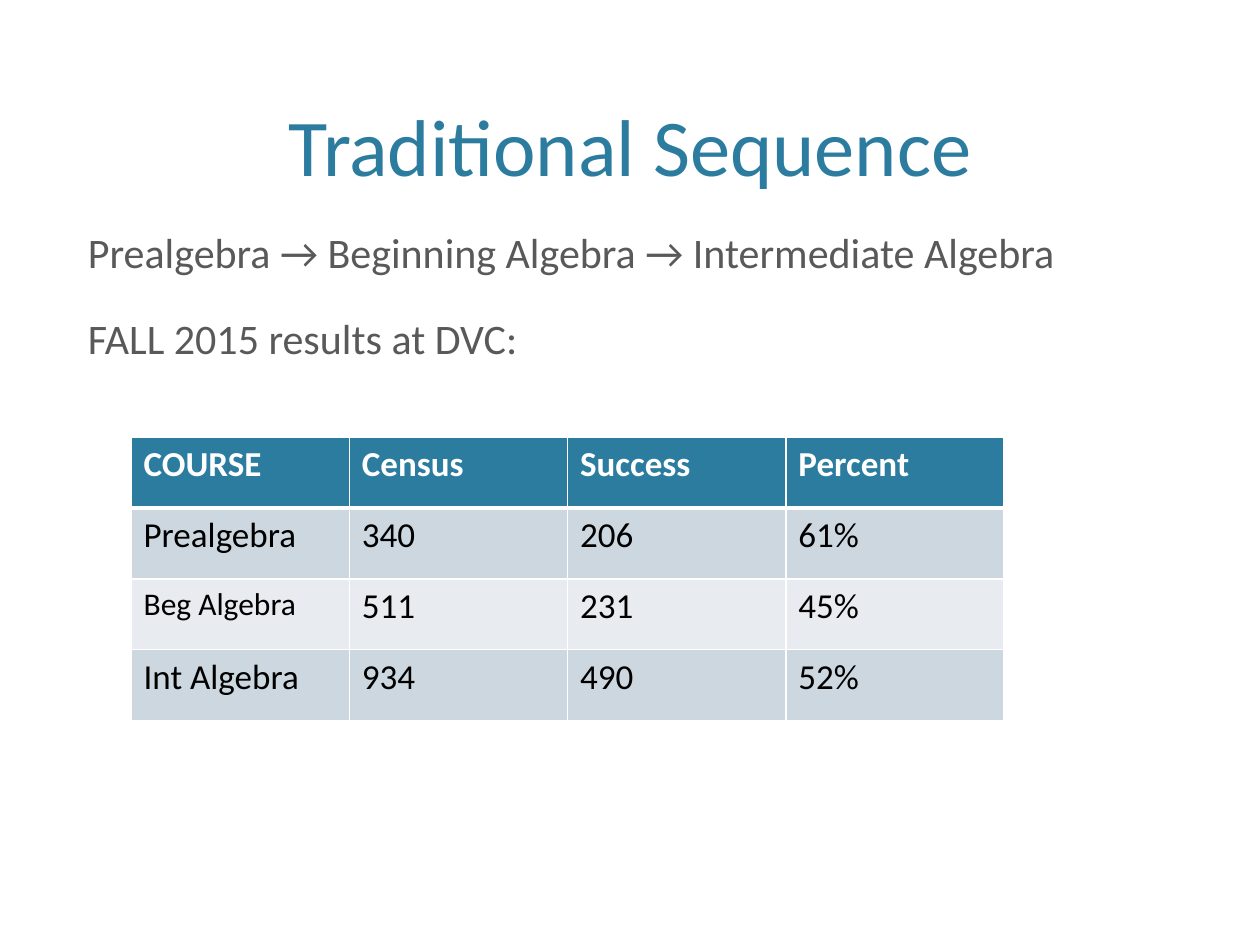
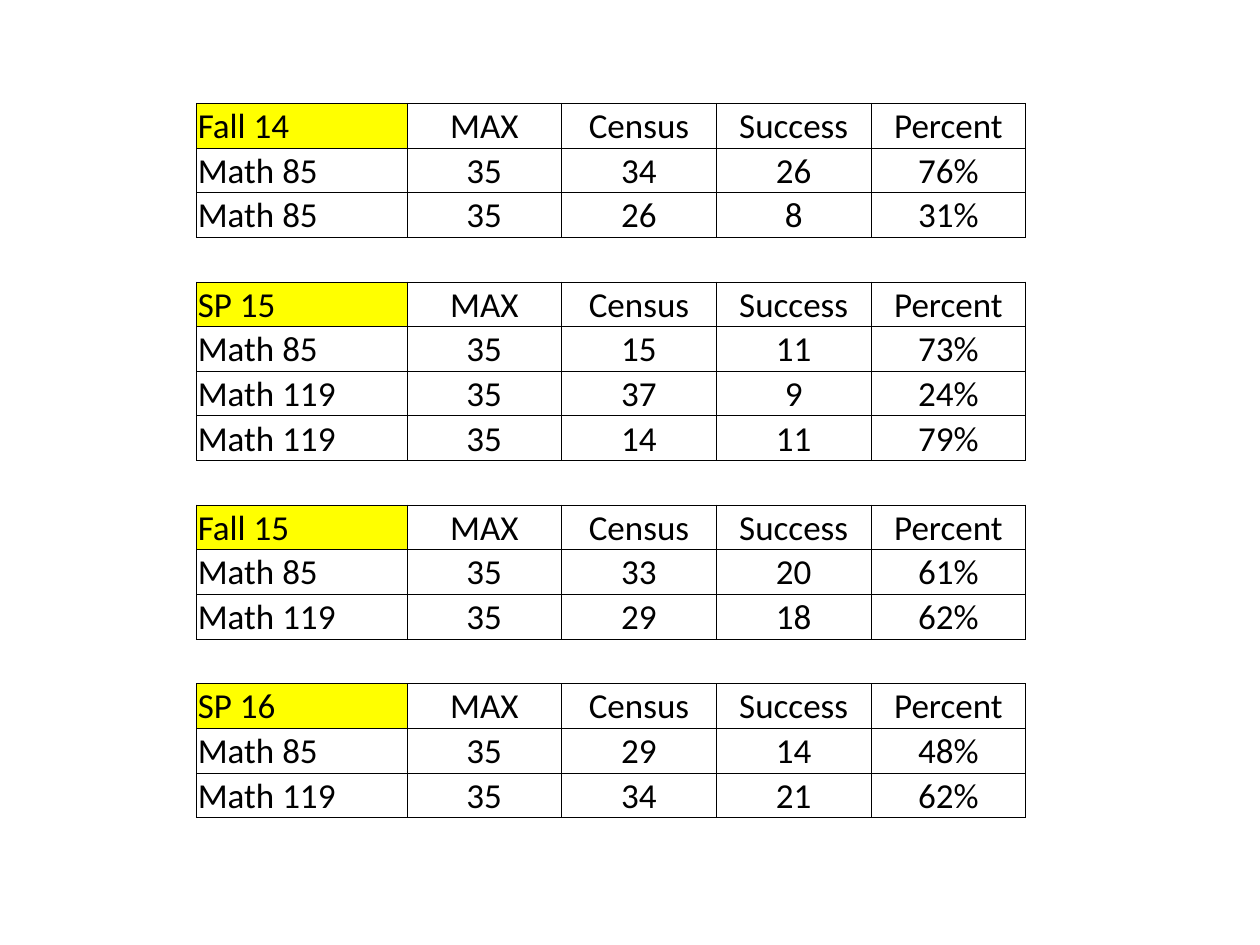
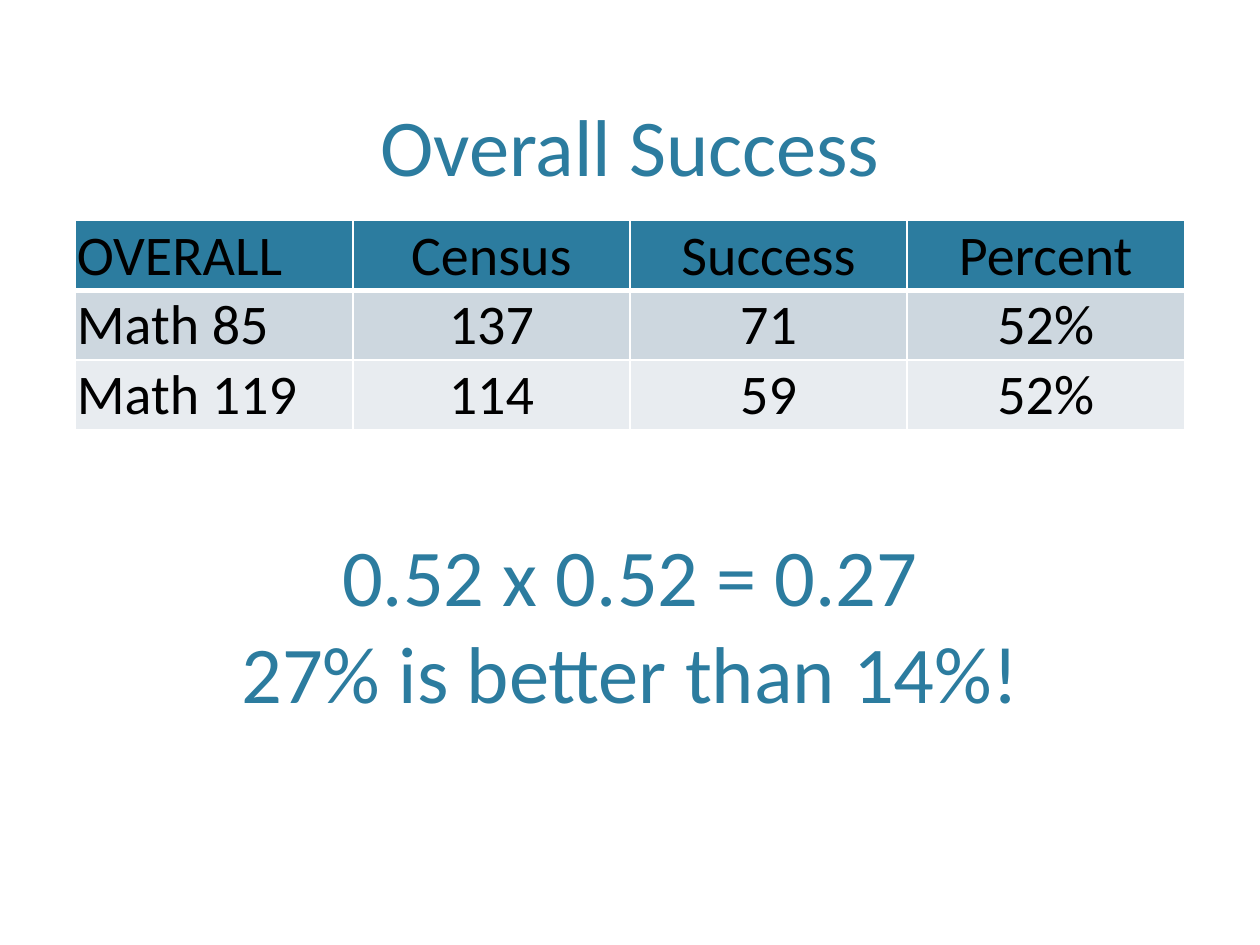
from lxml import etree
from pptx import Presentation
from pptx.dml.color import RGBColor
from pptx.enum.text import MSO_ANCHOR, PP_ALIGN
from pptx.oxml.ns import qn
from pptx.util import Inches, Pt

LEFT, CENTER = PP_ALIGN.LEFT, PP_ALIGN.CENTER
TOP, BOTTOM = MSO_ANCHOR.TOP, MSO_ANCHOR.BOTTOM

FONT = "Calibri"
BLUE, GREY, BLACK, WHITE, YELLOW = "2C7C9F", "595959", "000000", "FFFFFF", "FFFF00"
BANDS = ["CDD7DF", "E8ECF0"]
WIDTH, HEIGHT = 10, 7.5
COLUMNS, ROWS = 100, 75
MARGIN, CONTENT = 6, 88
TERM_HEADS = ["MAX", "Census", "Success", "Percent"]
TERM_COLUMNS = [16.7] + [12.28] * 4

TIGHT = {"margin_left": Inches(0.01), "margin_top": Inches(0.01),
         "margin_right": Inches(0.01), "margin_bottom": 0,
         "vertical_anchor": BOTTOM}

SEQUENCE = [
    ["COURSE", "Census", "Success", "Percent"],
    ["Prealgebra", "340", "206", "61%"],
    ["Beg Algebra", "511", "231", "45%"],
    ["Int Algebra", "934", "490", "52%"],
]
TERMS = {
    "Fall 14": [["Math 85", "35", "34", "26", "76%"],
                ["Math 85", "35", "26", "8", "31%"]],
    "SP 15": [["Math 85", "35", "15", "11", "73%"],
              ["Math 119", "35", "37", "9", "24%"],
              ["Math 119", "35", "14", "11", "79%"]],
    "Fall 15": [["Math 85", "35", "33", "20", "61%"],
                ["Math 119", "35", "29", "18", "62%"]],
    "SP 16": [["Math 85", "35", "29", "14", "48%"],
              ["Math 119", "35", "34", "21", "62%"]],
}
OVERALL = [
    ["OVERALL", "Census", "Success", "Percent"],
    ["Math 85", "137", "71", "52%"],
    ["Math 119", "114", "59", "52%"],
]


def color(value):
    """Turn a hex string into a colour."""
    return RGBColor.from_string(value)


def across(columns):
    """Turn grid columns into a length."""
    return Inches(WIDTH * columns / COLUMNS)


def down(rows):
    """Turn grid rows into a length."""
    return Inches(HEIGHT * rows / ROWS)


def assign(target, values):
    """Set each named attribute on the target."""
    for name, value in values.items():
        setattr(target, name, value)


class Deck:
    """Holds the shared style and the slide being built."""

    def __init__(self):
        """Start an empty deck with its slide size."""
        self.show = Presentation()
        assign(self.show, {"slide_width": Inches(WIDTH), "slide_height": Inches(HEIGHT)})
        self.page = None

    def add_page(self):
        """Start a new blank slide."""
        self.page = self.show.slides.add_slide(self.show.slide_layouts[6])

    def add_span(self, para, text, size, ink, align=LEFT, bold=False):
        """Fill one paragraph with a styled run."""
        para.alignment = align
        span = para.add_run()
        span.text = text
        assign(span.font, {"name": FONT, "size": Pt(size), "bold": bold})
        span.font.color.rgb = color(ink)

    def add_text(self, lines, top, height, size, ink, align, anchor, before=0):
        """Add a text box as wide as the content."""
        box = self.page.shapes.add_textbox(
            across(MARGIN), down(top), across(CONTENT), down(height))
        frame = box.text_frame
        assign(frame, {"word_wrap": True, "vertical_anchor": anchor})
        for index, line in enumerate(lines):
            para = frame.add_paragraph() if index else frame.paragraphs[0]
            para.space_before = Pt(before)
            self.add_span(para, line, size, ink, align)

    def headline(self, lines, top, height):
        """Add large centred blue text."""
        self.add_text(lines, top, height, 46, BLUE, CENTER, BOTTOM)

    def grid(self, left, top, widths, height, count):
        """Add a plain table with equal rows."""
        table = self.page.shapes.add_table(
            count, len(widths), across(left), down(top),
            across(sum(widths)), down(height)).table
        assign(table, {"first_row": False, "horz_banding": False})
        for column, width in zip(table.columns, widths):
            column.width = across(width)
        for row in table.rows:
            row.height = down(height / count)
        return table

    def paint(self, cell, fill, ink, edges):
        """Set the borders and fill of a cell; edges maps sides to points."""
        props = cell._tc.get_or_add_tcPr()
        for side in "LRTB":
            points = edges[side]
            line = etree.SubElement(props, qn(f"a:ln{side}"), w=str(Pt(points)))
            if points:
                solid = etree.SubElement(line, qn("a:solidFill"))
                etree.SubElement(solid, qn("a:srgbClr"), val=ink)
            else:
                etree.SubElement(line, qn("a:noFill"))
        if fill:
            cell.fill.solid()
            cell.fill.fore_color.rgb = color(fill)
        else:
            cell.fill.background()

    def banded_table(self, data, left, top, width, height, size,
                     head_ink, head_bold=False, layout=None, align=LEFT, sizes=None):
        """Add a table with a blue head and alternating bands."""
        table = self.grid(left, top, [width / len(data[0])] * len(data[0]),
                          height, len(data))
        for row, values in enumerate(data):
            head = row == 0
            fill = BLUE if head else BANDS[(row - 1) % 2]
            edges = {"L": 1, "R": 1, "T": 3 if row == 1 else 1, "B": 3 if head else 1}
            for column, value in enumerate(values):
                cell = table.cell(row, column)
                self.paint(cell, fill, WHITE, edges)
                assign(cell, layout or {"vertical_anchor": TOP})
                self.add_span(cell.text_frame.paragraphs[0], value,
                              (sizes or {}).get(value, size),
                              head_ink if head else BLACK,
                              align if column else LEFT, head and head_bold)

    def term_table(self, terms, left, top, height):
        """Add one ruled table with an open row between terms."""
        data = []
        for term, classes in terms.items():
            if data:
                data.append(None)
            data += [[term] + TERM_HEADS] + classes
        table = self.grid(left, top, TERM_COLUMNS, height, len(data))
        for row, values in enumerate(data):
            side = 0.5 if values else 0
            edges = {"L": side, "R": side, "T": 0.5, "B": 0.5}
            for column in range(len(TERM_COLUMNS)):
                cell = table.cell(row, column)
                value = values[column] if values else ""
                self.paint(cell, YELLOW if value in terms else None, BLACK, edges)
                assign(cell, TIGHT)
                para = cell.text_frame.paragraphs[0]
                if value:
                    self.add_span(para, value, 20, BLACK, CENTER if column else LEFT)
                else:
                    para.font.size = Pt(10)


def main():
    """Build the three slides and save them."""
    deck = Deck()

    deck.add_page()
    deck.headline(["Traditional Sequence"], 1.2, 14.6)
    deck.add_text(["Prealgebra → Beginning Algebra → Intermediate Algebra",
                   "FALL 2015 results at DVC:"],
                  17.5, 47.5, 24, GREY, LEFT, TOP, before=20)
    deck.banded_table(SEQUENCE, 10.4, 34.7, 69.3, 22.5, 20, WHITE,
                      head_bold=True, sizes={"Beg Algebra": 18})

    deck.add_page()
    deck.term_table(TERMS, 15.6, 8.2, 56.7)

    deck.add_page()
    deck.headline(["Overall Success"], 5.5, 10.3)
    deck.banded_table(OVERALL, MARGIN, 17.5, CONTENT, 16.6, 32, BLACK,
                      layout=TIGHT, align=CENTER)
    deck.headline(["0.52 x 0.52 = 0.27", "27% is better than 14%!"], 47.3, 10.3)

    deck.show.save("out.pptx")


if __name__ == "__main__":
    main()
